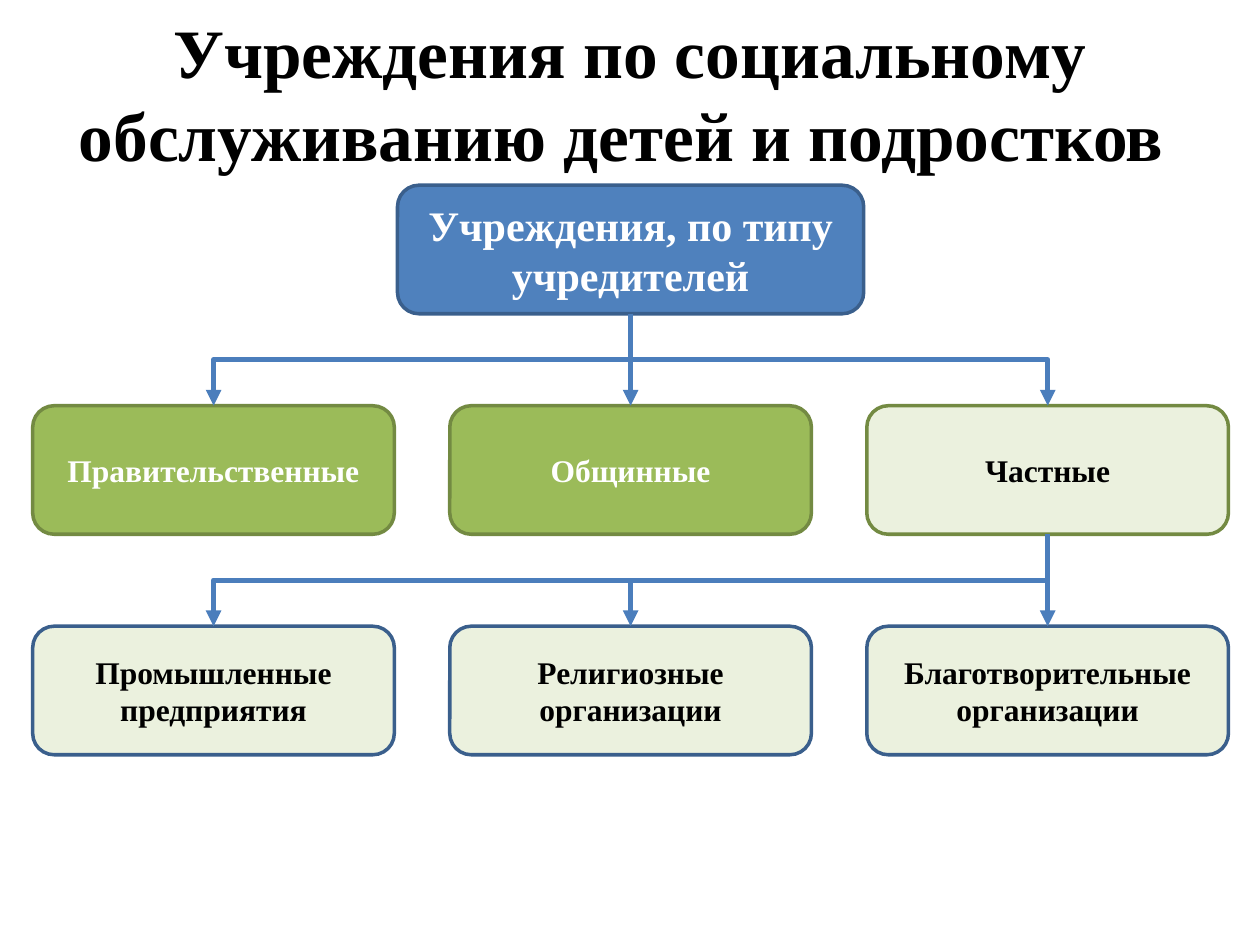
from dataclasses import dataclass

from lxml.etree import SubElement
from pptx import Presentation
from pptx.dml.color import RGBColor
from pptx.enum.shapes import MSO_CONNECTOR, MSO_SHAPE
from pptx.enum.text import MSO_ANCHOR, PP_ALIGN
from pptx.oxml.ns import qn
from pptx.util import Inches, Pt

COL_LEFT, COL_STEP = 0.26, 3.31
ROW_TOP, ROW_STEP = 1.47, 1.75
BOX_W, BOX_H = 2.87, 1.02
BLUE, BLUE_EDGE, ARROW = "4F81BD", "3A5F8C", "4B7EBC"
GREEN, GREEN_EDGE, PALE = "9BBB59", "738A42", "EBF1DE"
WHITE, BLACK = "FFFFFF", "000000"


@dataclass(frozen=True)
class Box:
    text: str
    col: int
    row: int
    fill: str
    edge: str
    color: str
    size: float = 18
    width: float = BOX_W


ROOT = Box("Учреждения, по типу учредителей", 1, 0, BLUE, BLUE_EDGE, WHITE, 24, 3.7)
FOUNDERS = [
    Box("Правительственные", 0, 1, GREEN, GREEN_EDGE, WHITE),
    Box("Общинные", 1, 1, GREEN, GREEN_EDGE, WHITE),
    Box("Частные", 2, 1, PALE, GREEN_EDGE, BLACK),
]
PRIVATE = [
    Box("Промышленные предприятия", 0, 2, PALE, BLUE_EDGE, BLACK),
    Box("Религиозные организации", 1, 2, PALE, BLUE_EDGE, BLACK),
    Box("Благотворительные организации", 2, 2, PALE, BLUE_EDGE, BLACK),
]


def rgb(value: str) -> RGBColor:
    return RGBColor.from_string(value)


def write(sp, text: str, size: float, color: str) -> None:
    tf = sp.text_frame
    tf.word_wrap = True
    tf.vertical_anchor = MSO_ANCHOR.MIDDLE
    p = tf.paragraphs[0]
    p.alignment = PP_ALIGN.CENTER
    r = p.add_run()
    r.text = text
    for name, value in {"name": "Times New Roman", "size": Pt(size), "bold": True}.items():
        setattr(r.font, name, value)
    r.font.color.rgb = rgb(color)


def draw_box(s, box: Box):
    center = COL_LEFT + box.col * COL_STEP + BOX_W / 2
    top = ROW_TOP + box.row * ROW_STEP
    sp = s.shapes.add_shape(
        MSO_SHAPE.ROUNDED_RECTANGLE,
        Inches(center - box.width / 2), Inches(top), Inches(box.width), Inches(BOX_H),
    )
    sp.shadow.inherit = False
    sp.fill.solid()
    sp.fill.fore_color.rgb = rgb(box.fill)
    sp.line.color.rgb = rgb(box.edge)
    sp.line.width = Pt(2)
    write(sp, box.text, box.size, box.color)
    return sp


def draw_arrow(s, parent, child) -> None:
    x1, y1 = parent.left + parent.width // 2, parent.top + parent.height
    x2, y2 = child.left + child.width // 2, child.top
    dx, dy = x2 - x1, y2 - y1
    if abs(dx) < Inches(0.01):
        cn = s.shapes.add_connector(MSO_CONNECTOR.STRAIGHT, x1, y1, x2, y2)
        cn.begin_connect(parent, 2)
        cn.end_connect(child, 0)
    else:
        cn = s.shapes.add_connector(MSO_CONNECTOR.ELBOW, 0, 0, 0, 0)
        cn.left, cn.top = (x1 + x2 - dy) // 2, (y1 + y2 - abs(dx)) // 2
        cn.width, cn.height = dy, abs(dx)
        turn = {"rot": "16200000", "flipH": "1"} if dx > 0 else {"rot": "5400000"}
        for name, value in turn.items():
            cn._element.spPr.find(qn("a:xfrm")).set(name, value)
    cn.line.color.rgb = rgb(ARROW)
    cn.line.width = Pt(3)
    SubElement(cn.line._get_or_add_ln(), qn("a:tailEnd"), type="triangle")
    SubElement(cn._element.spPr, qn("a:effectLst"))


def main() -> None:
    prs = Presentation()
    prs.slide_width, prs.slide_height = Inches(10), Inches(7.5)
    s = prs.slides.add_slide(prs.slide_layouts[6])
    title = s.shapes.add_textbox(Inches(0.5), 0, Inches(9), Inches(1.47))
    write(title, "Учреждения по социальному обслуживанию детей и подростков ", 39.6, BLACK)
    root = draw_box(s, ROOT)
    founders = [draw_box(s, box) for box in FOUNDERS]
    private = [draw_box(s, box) for box in PRIVATE]
    for parent, children in ((root, founders), (founders[-1], private)):
        for child in children:
            draw_arrow(s, parent, child)
    prs.save("out.pptx")


if __name__ == "__main__":
    main()
